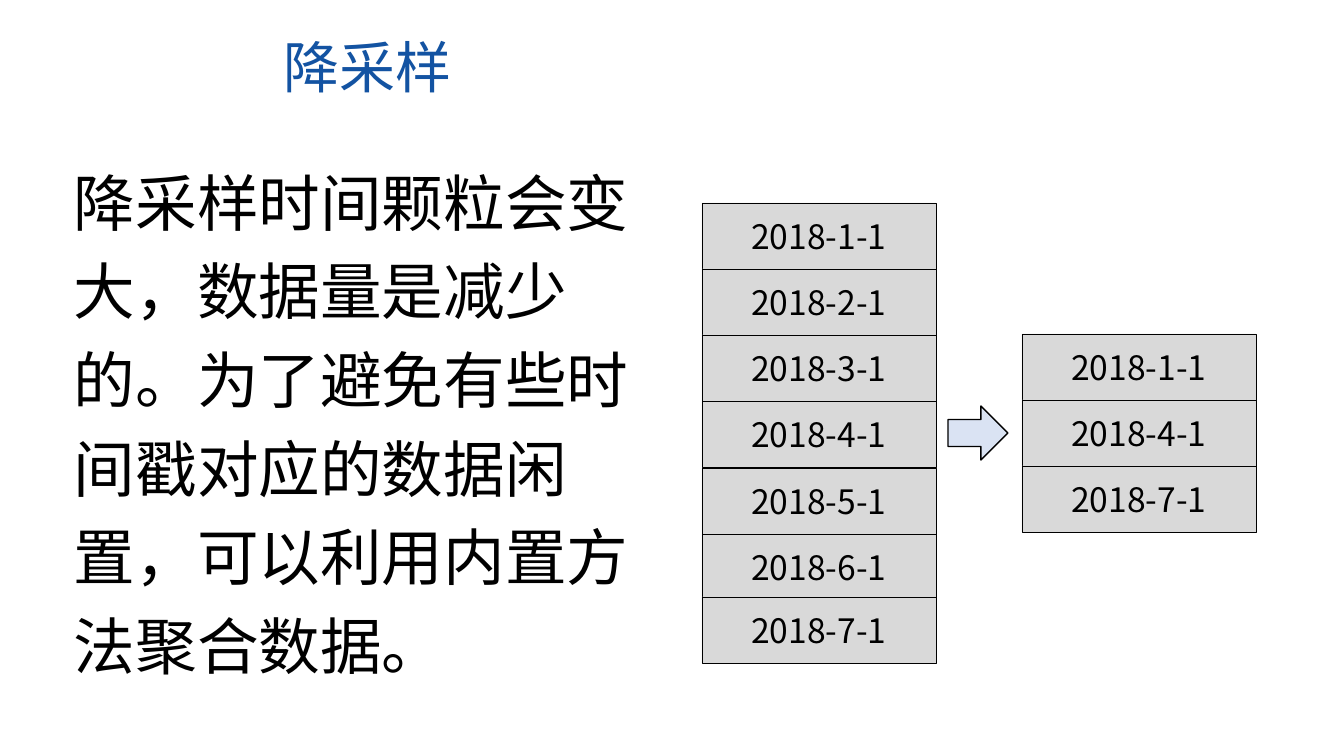
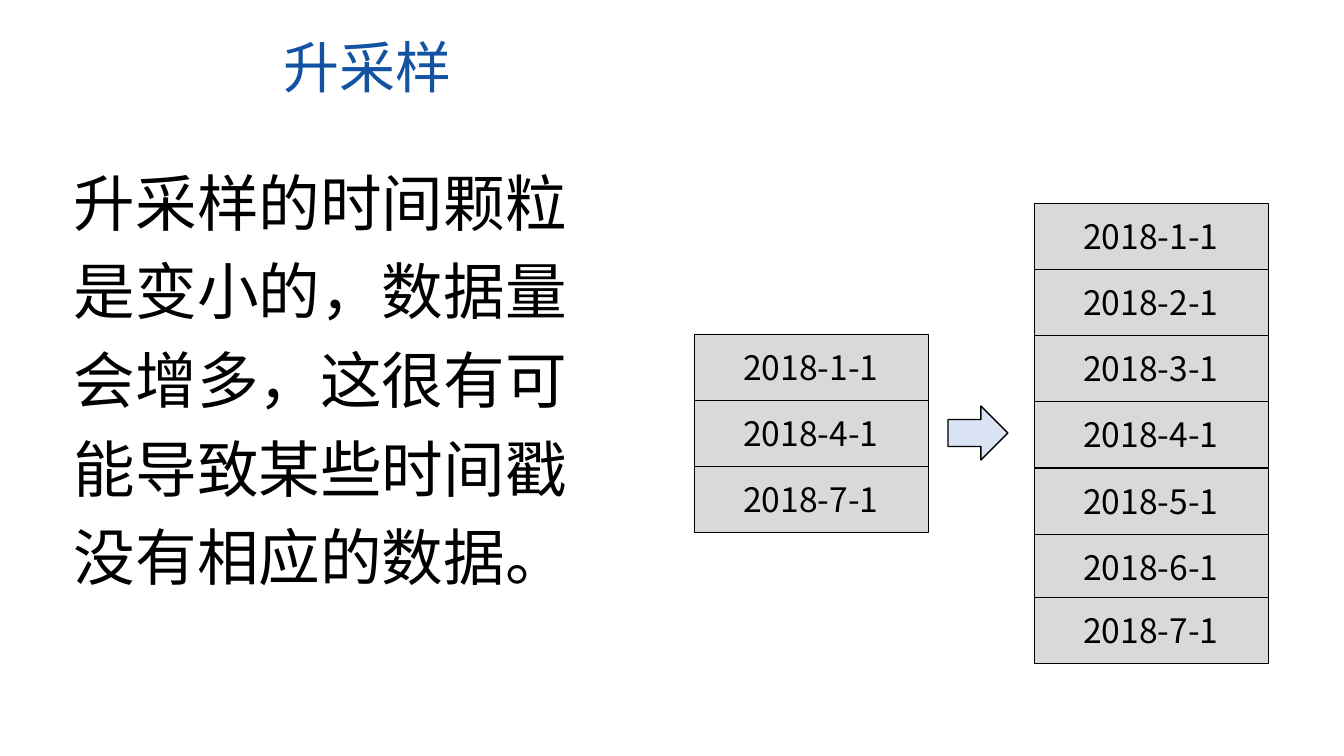
from lxml import etree
from pptx import Presentation
from pptx.dml.color import RGBColor
from pptx.enum import shapes, text
from pptx.oxml.ns import qn
from pptx.util import Pt

PX = 914400 / 100.8
FONT = "Noto Sans CJK SC"
BLUE = RGBColor(0x13, 0x53, 0xA2)
BLACK = RGBColor(0, 0, 0)
GREY = RGBColor(0xD9, 0xD9, 0xD9)
PALE_BLUE = RGBColor(0xDA, 0xE3, 0xF3)

ROW_W, ROW_H = 234, 66
# The last month row sits slightly higher than the even step
MONTHS = [(f"2018-{m}-1", min(round(203 + 66.15 * (m - 1)), 597)) for m in range(1, 8)]
QUARTERS = [(f"2018-{m}-1", 334 + ROW_H * i) for i, m in enumerate((1, 4, 7))]

# title, body, body width and height, (left, rows) of each column
SLIDES = [
    ("降采样",
     "降采样时间颗粒会变大，数据量是减少的。为了避免有些时间戳对应的数据闲置，可以利用内置方法聚合数据。",
     610, 547, [(702, MONTHS), (1022, QUARTERS)]),
    ("升采样",
     "升采样的时间颗粒是变小的，数据量会增多，这很有可能导致某些时间戳没有相应的数据。",
     560, 458, [(1034, MONTHS), (694, QUARTERS)]),
]


def set_text(sp, content, size, color):
    tf = sp.text_frame
    tf.text = content
    tf.word_wrap = True
    p = tf.paragraphs[0]
    # Keep punctuation inside the text area
    p._p.get_or_add_pPr().set("hangingPunct", "0")
    r = p.runs[0]
    r.font.size = Pt(size)
    r.font.name = FONT
    r.font.color.rgb = color
    etree.SubElement(r._r.get_or_add_rPr(), qn("a:ea"), typeface=FONT)
    return tf, p


def add_box(s, kind, box, fill, line_width):
    sp = s.shapes.add_shape(kind, *(round(n * PX) for n in box))
    sp.shadow.inherit = False
    sp.fill.solid()
    sp.fill.fore_color.rgb = fill
    sp.line.color.rgb = BLACK
    sp.line.width = Pt(line_width)
    return sp


prs = Presentation()
prs.slide_width, prs.slide_height = round(1344 * PX), round(756 * PX)

for title, body, body_w, body_h, columns in SLIDES:
    s = prs.slides.add_slide(prs.slide_layouts[6])

    # Title and body
    for content, box, size, color, spacing in (
        (title, (274, 28, 952, 78), 40, BLUE, 1.0),
        (body, (64, 145, body_w, body_h), 44, BLACK, 1.2),
    ):
        sp = s.shapes.add_textbox(*(round(n * PX) for n in box))
        tf, p = set_text(sp, content, size, color)
        tf.auto_size = text.MSO_AUTO_SIZE.SHAPE_TO_FIT_TEXT
        p.line_spacing = spacing

    # Date columns
    for left, rows in columns:
        for date, top in rows:
            sp = add_box(s, shapes.MSO_SHAPE.RECTANGLE, (left, top, ROW_W, ROW_H), GREY, 0.25)
            tf, p = set_text(sp, date, 24, BLACK)
            tf.vertical_anchor = text.MSO_ANCHOR.MIDDLE
            p.alignment = text.PP_ALIGN.CENTER

    # Arrow between the columns
    add_box(s, shapes.MSO_SHAPE.RIGHT_ARROW, (948, 406, 60, 54), PALE_BLUE, 1)

prs.save("out.pptx")
